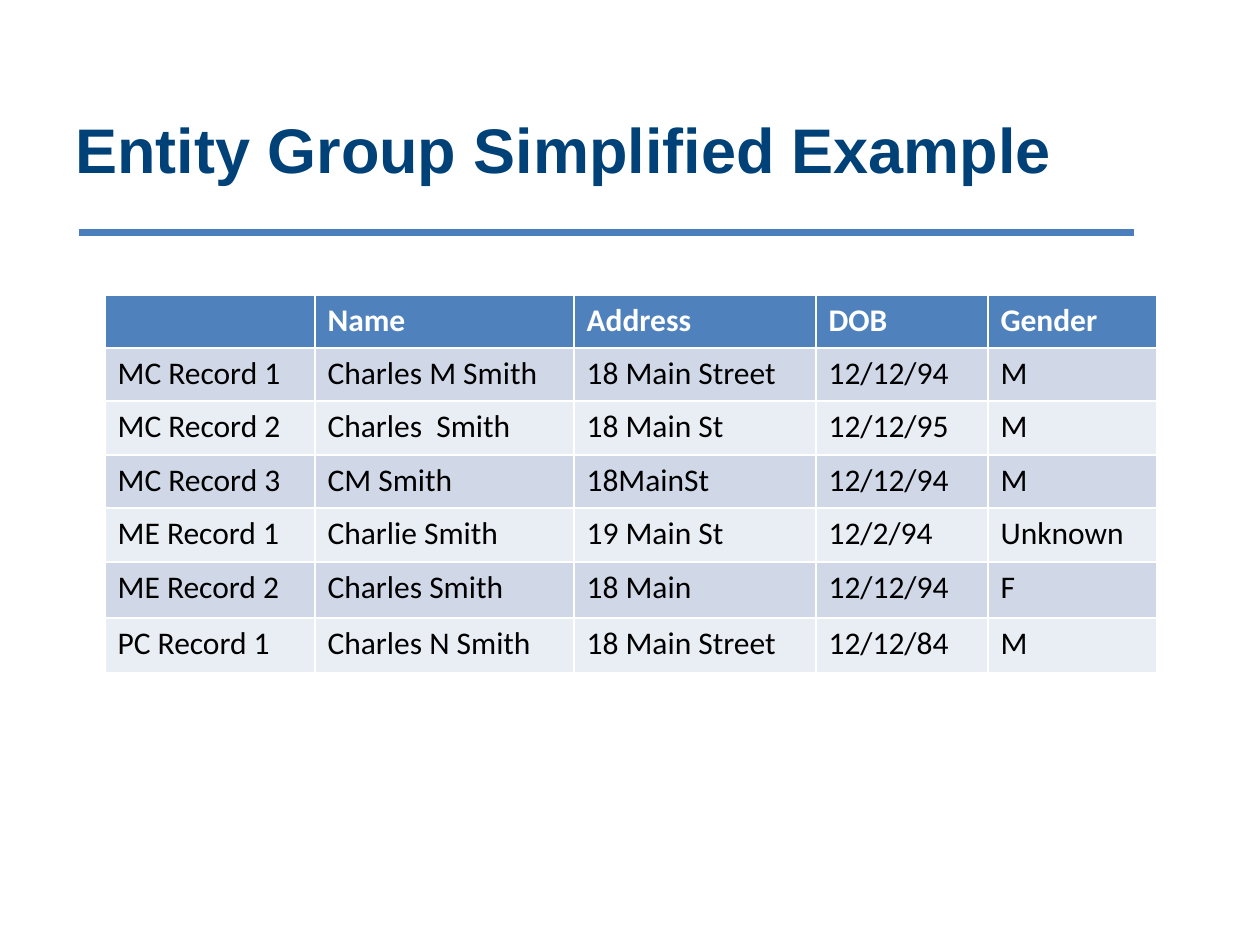
"""Build the entity group example slide: a title, a rule and a record table."""
from lxml import etree
from pptx import Presentation
from pptx import util as u
from pptx.dml.color import RGBColor
from pptx.enum import shapes, text
from pptx.oxml.ns import qn

COLORS = {
    "title": "004178",
    "rule": "4B7EBC",
    "header": "4F81BD",
    "odd": "D0D8E8",
    "even": "E9EDF4",
    "white": "FFFFFF",
    "black": "000000",
}
TITLE = {"name": "Arial", "size": u.Pt(36), "bold": True}
HEADER = {"name": "Calibri", "size": u.Pt(18), "bold": True}
BODY = {**HEADER, "bold": False}

COL_WIDTHS = [210, 259, 242, 172, 169]
ROW_HEIGHTS = [53, 53, 54, 53, 54, 56, 55]
RECORDS = [
    ["", "Name", "Address", "DOB", "Gender"],
    ["MC Record 1", "Charles M Smith", "18 Main Street", "12/12/94", "M"],
    ["MC Record 2", "Charles  Smith", "18 Main St", "12/12/95", "M"],
    ["MC Record 3", "CM Smith", "18MainSt", "12/12/94", "M"],
    ["ME Record 1", "Charlie Smith", "19 Main St", "12/2/94", "Unknown"],
    ["ME Record 2", "Charles Smith", "18 Main", "12/12/94", "F"],
    ["PC Record 1", "Charles N Smith", "18 Main Street", "12/12/84", "M"],
]


def px(n):
    return u.Emu(round(n * 914400 / 126))


def rgb(name):
    return RGBColor.from_string(COLORS[name])


class Deck:
    def __init__(self, width, height):
        self.prs = Presentation()
        self.prs.slide_width, self.prs.slide_height = px(width), px(height)
        self.s = self.prs.slides.add_slide(self.prs.slide_layouts[6])

    def add_text(self, tf, words, color, style):
        r = tf.paragraphs[0].add_run()
        r.text = words
        for key, value in style.items():
            setattr(r.font, key, value)
        r.font.color.rgb = rgb(color)

    def title(self, x, y, w, h, words):
        tf = self.s.shapes.add_textbox(px(x), px(y), px(w), px(h)).text_frame
        tf.word_wrap = True
        tf.vertical_anchor = text.MSO_ANCHOR.MIDDLE
        self.add_text(tf, words, "title", TITLE)

    def rule(self, x1, x2, y, weight):
        sp = self.s.shapes.add_connector(
            shapes.MSO_CONNECTOR.STRAIGHT, px(x1), px(y), px(x2), px(y))
        sp.line.color.rgb = rgb("rule")
        sp.line.width = u.Pt(weight)
        etree.SubElement(sp._element.spPr, qn("a:effectLst"))

    def table(self, x, y, widths, heights, rows):
        tbl = self.s.shapes.add_table(
            len(rows), len(widths), px(x), px(y),
            px(sum(widths)), px(sum(heights))).table
        for col, w in zip(tbl.columns, widths):
            col.width = px(w)
        for i, (row, h, values) in enumerate(zip(tbl.rows, heights, rows)):
            row.height = px(h)
            fill = "header" if i == 0 else "odd" if i % 2 else "even"
            color, style = ("black", BODY) if i else ("white", HEADER)
            for cell, value in zip(row.cells, values):
                cell.fill.solid()
                cell.fill.fore_color.rgb = rgb(fill)
                if value:
                    self.add_text(cell.text_frame, value, color, style)


def main():
    deck = Deck(1260, 945)
    deck.rule(79, 1134, 233, 4)
    deck.title(63, 78, 1071, 140, "Entity Group Simplified Example")
    deck.table(105, 295, COL_WIDTHS, ROW_HEIGHTS, RECORDS)
    deck.prs.save("out.pptx")


if __name__ == "__main__":
    main()
